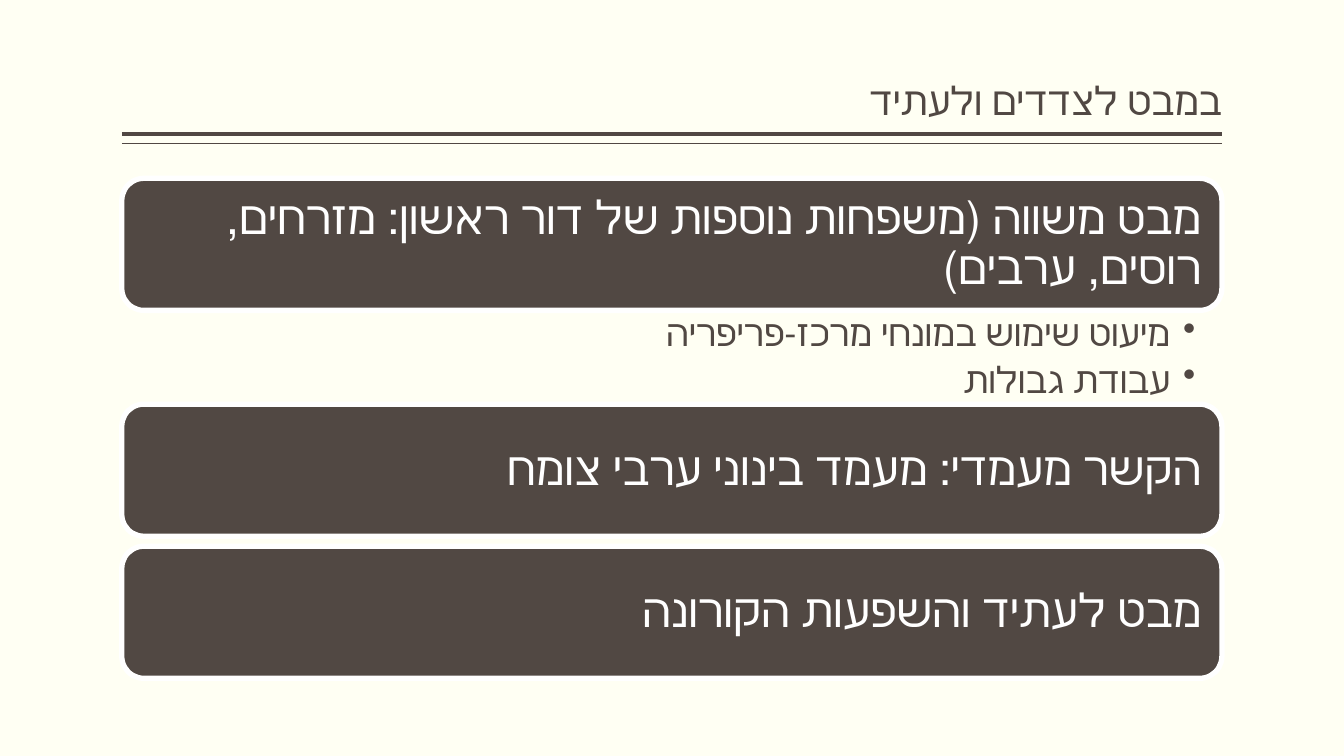
"""Build a right-to-left Hebrew slide of three topic bars with two bullets."""
import pptx
import pptx.dml.color
import pptx.enum.shapes
import pptx.enum.text
import pptx.oxml.ns
import pptx.util
from lxml import etree

Pt = pptx.util.Pt
RGB = pptx.dml.color.RGBColor.from_string
Anchor = pptx.enum.text.MSO_ANCHOR
qn = pptx.oxml.ns.qn

THEME = {
    "background": RGB("FFFFF3"), "dark": RGB("514843"), "light": RGB("FFFFFF"),
    "title_size": 28, "bar_size": 33, "bullet_size": 26,
    "title_font": "Calibri", "body_font": "Roboto",
}
LEFT, WIDTH = 87, 785.8
BAR_TOP, BAR_HEIGHT, GAP, BULLETS_HEIGHT = 127.4, 94.3, 7.2, 67

BARS = [
    ("מבט משווה (משפחות נוספות של דור ראשון: מזרחים, רוסים, ערבים)", THEME["title_font"],
     ["מיעוט שימוש במונחי מרכז-פריפריה", "עבודת גבולות"]),
    ("הקשר מעמדי: מעמד בינוני ערבי צומח", THEME["body_font"], []),
    ("מבט לעתיד והשפעות הקורונה", THEME["body_font"], []),
]


def format_frame(tf, anchor, left, top, right, bottom):
    """Set wrapping, anchor and insets of a text frame."""
    values = {
        "word_wrap": True, "auto_size": pptx.enum.text.MSO_AUTO_SIZE.NONE,
        "vertical_anchor": anchor, "margin_left": Pt(left), "margin_top": Pt(top),
        "margin_right": Pt(right), "margin_bottom": Pt(bottom),
    }
    for name, value in values.items():
        setattr(tf, name, value)


def write_rtl(p, text, font, size, color):
    """Write one right-to-left paragraph and return its properties."""
    p.alignment = pptx.enum.text.PP_ALIGN.RIGHT
    p.line_spacing = 0.9
    p.space_before = Pt(0)
    r = p.add_run()
    r.text = text
    for name, value in {"name": font, "size": Pt(size), "bold": False}.items():
        setattr(r.font, name, value)
    r.font.color.rgb = color
    pPr = p._p.get_or_add_pPr()
    pPr.set("rtl", "1")
    return pPr


prs = pptx.Presentation()
prs.slide_width, prs.slide_height = Pt(960), Pt(540)
s = prs.slides.add_slide(prs.slide_layouts[5])
s.background.fill.solid()
s.background.fill.fore_color.rgb = THEME["background"]

for y, weight in [(95.8, 3), (102.5, 1)]:
    line = s.shapes.add_connector(
        pptx.enum.shapes.MSO_CONNECTOR.STRAIGHT, Pt(LEFT), Pt(y), Pt(LEFT + WIDTH), Pt(y))
    line.line.color.rgb = THEME["dark"]
    line.line.width = Pt(weight)
    etree.SubElement(line._element.spPr, qn("a:effectLst"))

title = s.shapes.title
box = {"left": LEFT, "top": 5.8, "width": WIDTH, "height": 86.4}
for name, value in box.items():
    setattr(title, name, Pt(value))
format_frame(title.text_frame, Anchor.BOTTOM, 0, 3.6, 0, 3.6)
write_rtl(title.text_frame.paragraphs[0], "במבט לצדדים ולעתיד",
          THEME["title_font"], THEME["title_size"], THEME["dark"])

y = BAR_TOP
for text, font, bullets in BARS:
    sp = s.shapes.add_shape(pptx.enum.shapes.MSO_SHAPE.ROUNDED_RECTANGLE,
                            Pt(LEFT), Pt(y), Pt(WIDTH), Pt(BAR_HEIGHT))
    sp.shadow.inherit = False
    sp.fill.solid()
    sp.fill.fore_color.rgb = THEME["dark"]
    sp.line.color.rgb = THEME["light"]
    sp.line.width = Pt(3.78)
    format_frame(sp.text_frame, Anchor.MIDDLE, 10, 10, 10, 10)
    write_rtl(sp.text_frame.paragraphs[0], text, font, THEME["bar_size"], THEME["light"])
    y += BAR_HEIGHT
    if not bullets:
        y += GAP
        continue
    tf = s.shapes.add_textbox(Pt(LEFT), Pt(y), Pt(WIDTH), Pt(BULLETS_HEIGHT)).text_frame
    format_frame(tf, Anchor.TOP, 25, 3.6, 18.5, 3.6)
    for i, bullet in enumerate(bullets):
        p = tf.add_paragraph() if i else tf.paragraphs[0]
        p.space_after = Pt(5)
        pPr = write_rtl(p, bullet, THEME["body_font"], THEME["bullet_size"], THEME["dark"])
        pPr.set("marL", str(Pt(18)))
        pPr.set("indent", str(Pt(-18)))
        etree.SubElement(pPr, qn("a:buChar"), char="•")
    y += BULLETS_HEIGHT

prs.save("out.pptx")
